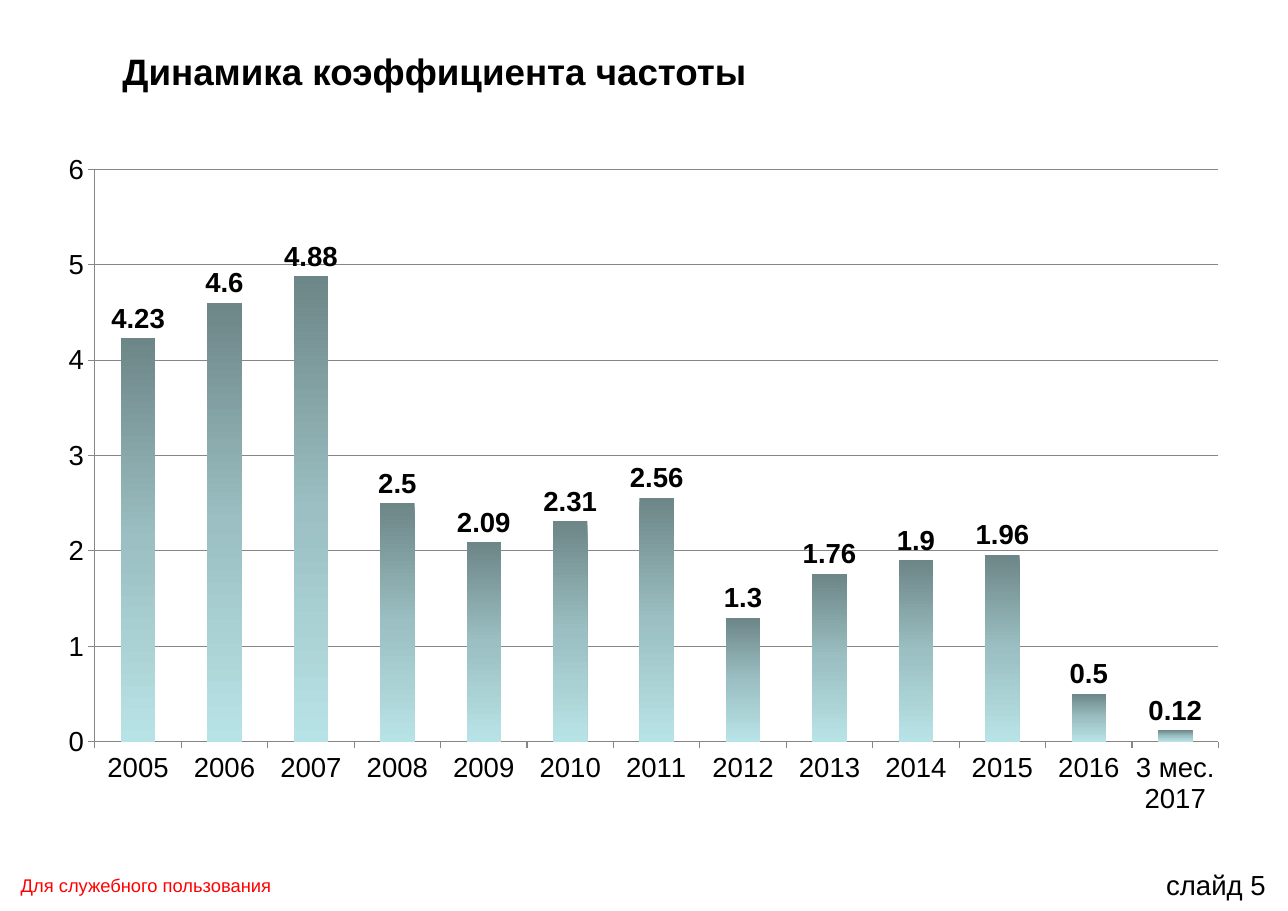
from pptx import Presentation
from pptx.chart.data import CategoryChartData
from pptx.dml.color import RGBColor
from pptx.enum.chart import XL_CHART_TYPE, XL_LABEL_POSITION, XL_TICK_MARK
from pptx.enum.text import MSO_ANCHOR, MSO_AUTO_SIZE, PP_ALIGN
from pptx.oxml import parse_xml
from pptx.oxml.ns import nsdecls
from pptx.util import Pt

BLACK = RGBColor(0x00, 0x00, 0x00)
RED = RGBColor(0xFF, 0x00, 0x00)
GREY = RGBColor(0x86, 0x86, 0x86)
BAR_STOPS = [
    (0, RGBColor(0x6D, 0x86, 0x88)),
    (50, RGBColor(0x9B, 0xBF, 0xC2)),
    (100, RGBColor(0xB8, 0xE3, 0xE6)),
]
FONT = "Arial"

TITLE = "Динамика коэффициента частоты"
# text, box (left, top, width, height), size, colour, anchor
FOOTERS = [
    ("Для служебного пользования", (6.5, 570, 205, 17.5), 12, RED, MSO_ANCHOR.MIDDLE),
    ("слайд 5", (755, 564, 85, 31), 18, BLACK, MSO_ANCHOR.TOP),
]
FREQUENCY = {
    "2005": 4.23, "2006": 4.6, "2007": 4.88, "2008": 2.5, "2009": 2.09,
    "2010": 2.31, "2011": 2.56, "2012": 1.3, "2013": 1.76, "2014": 1.9,
    "2015": 1.96, "2016": 0.5, "3 мес. 2017": 0.12,
}
CHART_BOX = (29.5, 91.5, 782.5, 471)
PLOT_BOX = (62, 110.8, 734.3, 374)


def style(font, size, color=BLACK, bold=False):
    font.name, font.size, font.bold = FONT, Pt(size), bold
    font.color.rgb = color


def points(box):
    return [Pt(v) for v in box]


def set_plot_box(chart):
    """Fix the inner plot area as fractions of the chart frame."""
    left, top, width, height = CHART_BOX
    x, y, w, h = PLOT_BOX
    parts = {"x": (x - left) / width, "y": (y - top) / height,
             "w": w / width, "h": h / height}
    modes = "".join(f'<c:{k}Mode val="edge"/>' for k in "xy")
    values = "".join(f'<c:{k} val="{v:.4f}"/>' for k, v in parts.items())
    plot_area = chart._chartSpace.chart.plotArea
    for layout in plot_area.findall("{*}layout"):
        plot_area.remove(layout)
    plot_area.insert(0, parse_xml(
        f'<c:layout {nsdecls("c")}><c:manualLayout><c:layoutTarget val="inner"/>'
        f"{modes}{values}</c:manualLayout></c:layout>"))


def fill_gradient(series):
    stops = "".join(
        f'<a:gs pos="{pos * 1000}"><a:srgbClr val="{color}"/></a:gs>'
        for pos, color in BAR_STOPS)
    series._element.get_or_add_spPr().append(parse_xml(
        f'<a:gradFill {nsdecls("a")}><a:gsLst>{stops}</a:gsLst>'
        '<a:lin ang="5400000" scaled="0"/></a:gradFill>'))


def add_frequency_chart(s):
    data = CategoryChartData()
    data.categories = list(FREQUENCY)
    data.add_series("Series 1", list(FREQUENCY.values()))
    chart = s.shapes.add_chart(
        XL_CHART_TYPE.COLUMN_CLUSTERED, *points(CHART_BOX), data).chart
    chart.has_title = False
    chart.has_legend = False
    style(chart.font, 10)
    set_plot_box(chart)

    values = chart.value_axis
    values.minimum_scale, values.maximum_scale, values.major_unit = 0, 6, 1
    values.has_major_gridlines = True
    for axis in (chart.category_axis, values):
        axis.major_tick_mark = XL_TICK_MARK.OUTSIDE
        style(axis.tick_labels.font, 18)
    for line in (chart.category_axis.format.line, values.format.line,
                 values.major_gridlines.format.line):
        line.color.rgb = GREY
        line.width = Pt(0.75)

    plot = chart.plots[0]
    plot.gap_width = 150
    plot.vary_by_categories = False
    fill_gradient(plot.series[0])
    labels = plot.series[0].data_labels
    labels.show_value = True
    labels.position = XL_LABEL_POSITION.OUTSIDE_END
    style(labels.font, 18, bold=True)


def add_title(s):
    title = s.shapes.title
    title.left, title.top, title.width, title.height = points((72, 25, 728.5, 34))
    tf = title.text_frame
    tf.text = TITLE
    tf.auto_size = MSO_AUTO_SIZE.NONE
    tf.vertical_anchor = MSO_ANCHOR.TOP
    tf.margin_left = tf.margin_right = Pt(8)
    tf.margin_top = tf.margin_bottom = Pt(4.3)
    p = tf.paragraphs[0]
    p.alignment = PP_ALIGN.LEFT
    p.line_spacing = 1.1
    style(p.font, 24, bold=True)


def add_footer(s, text, box, size, color, anchor):
    tf = s.shapes.add_textbox(*points(box)).text_frame
    tf.word_wrap = True
    tf.vertical_anchor = anchor
    tf.text = text
    style(tf.paragraphs[0].font, size, color)


def main():
    prs = Presentation()
    prs.slide_width, prs.slide_height = Pt(841.68), Pt(595.44)
    s = prs.slides.add_slide(prs.slide_layouts[5])
    for footer in FOOTERS:
        add_footer(s, *footer)
    add_title(s)
    add_frequency_chart(s)
    prs.save("out.pptx")


if __name__ == "__main__":
    main()
